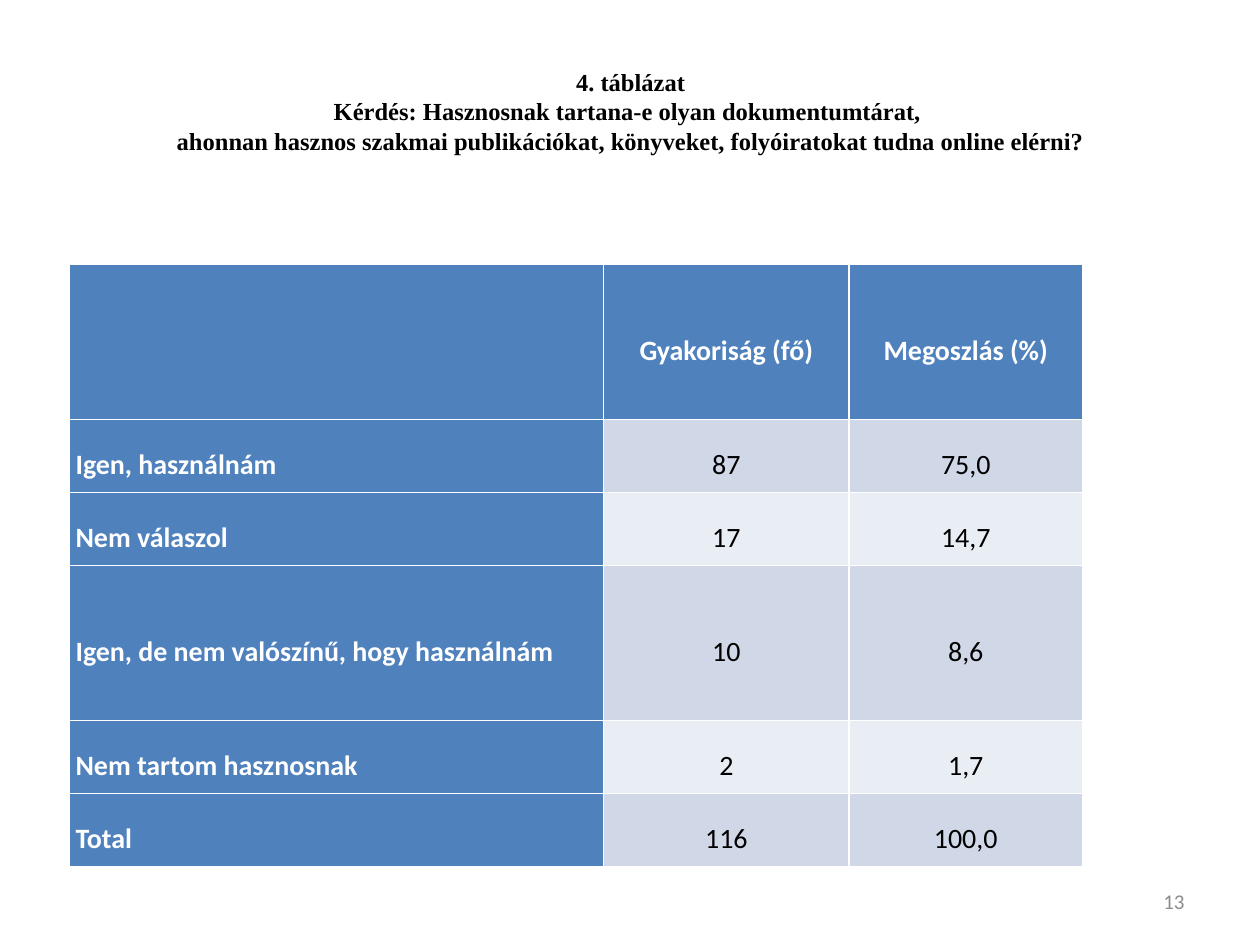
"""Builds the survey table slide on the usefulness of an online document library."""
import pptx
import pptx.dml.color
import pptx.enum.text
import pptx.util

Inches = pptx.util.Inches
Align = pptx.enum.text.PP_ALIGN
Anchor = pptx.enum.text.MSO_ANCHOR

COLORS = {
    "header": "4F81BD",
    "band_dark": "D0D8E8",
    "band_light": "E9EDF4",
    "white": "FFFFFF",
    "black": "000000",
    "gray": "8C8C8C",
}
TITLE_LINES = [
    "4. táblázat",
    "Kérdés: Hasznosnak tartana-e olyan dokumentumtárat, ",
    "ahonnan hasznos szakmai publikációkat, könyveket, folyóiratokat tudna online elérni?",
]
ANSWERS = [
    ["", "Gyakoriság (fő)", "Megoszlás (%)"],
    ["Igen, használnám", "87", "75,0"],
    ["Nem válaszol", "17", "14,7"],
    ["Igen, de nem valószínű, hogy használnám", "10", "8,6"],
    ["Nem tartom hasznosnak", "2", "1,7"],
    ["Total", "116", "100,0"],
]
COLUMN_WIDTHS = [4.24, 1.95, 1.85]
ROW_HEIGHTS = [1.23, 0.58, 0.58, 1.23, 0.58, 0.58]


class SlideBuilder:
    """Holds the text style and the current slide."""

    def __init__(self, slide):
        self.slide = slide
        self.body_font = "Calibri"
        self.title_font = "Times New Roman"

    def color(self, name):
        return pptx.dml.color.RGBColor.from_string(COLORS[name])

    def format_text(self, frame, font, size, color, bold, align, spacing=1.0):
        for para in frame.paragraphs:
            para.alignment = align
            para.line_spacing = spacing
            for span in para.runs:
                span.font.name = font
                span.font.size = pptx.util.Pt(size)
                span.font.bold = bold
                span.font.color.rgb = self.color(color)

    def title(self, lines, left, top, width, height):
        box = self.slide.shapes.title
        box.left, box.top = Inches(left), Inches(top)
        box.width, box.height = Inches(width), Inches(height)
        frame = box.text_frame
        frame.text = "\n".join(lines)
        frame.word_wrap = False
        frame.auto_size = pptx.enum.text.MSO_AUTO_SIZE.NONE
        frame.vertical_anchor = Anchor.TOP
        self.format_text(frame, self.title_font, 14, "black", True, Align.CENTER)

    def table(self, rows, left, top, widths, heights):
        frame = self.slide.shapes.add_table(
            len(rows), len(widths), Inches(left), Inches(top),
            Inches(sum(widths)), Inches(sum(heights)))
        table = frame.table
        table.first_col = True
        for column, width in zip(table.columns, widths):
            column.width = Inches(width)
        for row, height in zip(table.rows, heights):
            row.height = Inches(height)
        for row_index, texts in enumerate(rows):
            for column_index, text in enumerate(texts):
                self.cell(table.cell(row_index, column_index), text, row_index, column_index)

    def cell(self, cell, text, row_index, column_index):
        heading = row_index == 0 or column_index == 0
        band = "band_dark" if row_index % 2 else "band_light"
        cell.fill.solid()
        cell.fill.fore_color.rgb = self.color("header" if heading else band)
        cell.vertical_anchor = Anchor.MIDDLE
        cell.margin_left = cell.margin_right = Inches(0.05)
        cell.margin_top = cell.margin_bottom = 0
        cell.text_frame.text = text
        self.format_text(
            cell.text_frame, self.body_font, 16, "white" if heading else "black",
            heading, Align.CENTER if column_index else Align.LEFT, 1.5)

    def page_number(self, text, left, top, width, height):
        box = self.slide.shapes.add_textbox(
            Inches(left), Inches(top), Inches(width), Inches(height))
        frame = box.text_frame
        frame.word_wrap = True
        frame.vertical_anchor = Anchor.MIDDLE
        frame.text = text
        self.format_text(frame, self.body_font, 12, "gray", False, Align.RIGHT)


def main():
    deck = pptx.Presentation()
    deck.slide_width, deck.slide_height = Inches(10), Inches(7.5)
    page = SlideBuilder(deck.slides.add_slide(deck.slide_layouts[5]))
    page.page_number("13", 7.17, 6.95, 2.33, 0.4)
    page.table(ANSWERS, 0.55, 2.1, COLUMN_WIDTHS, ROW_HEIGHTS)
    page.title(TITLE_LINES, 1.28, 0.48, 7.45, 1.04)
    deck.save("out.pptx")


if __name__ == "__main__":
    main()
